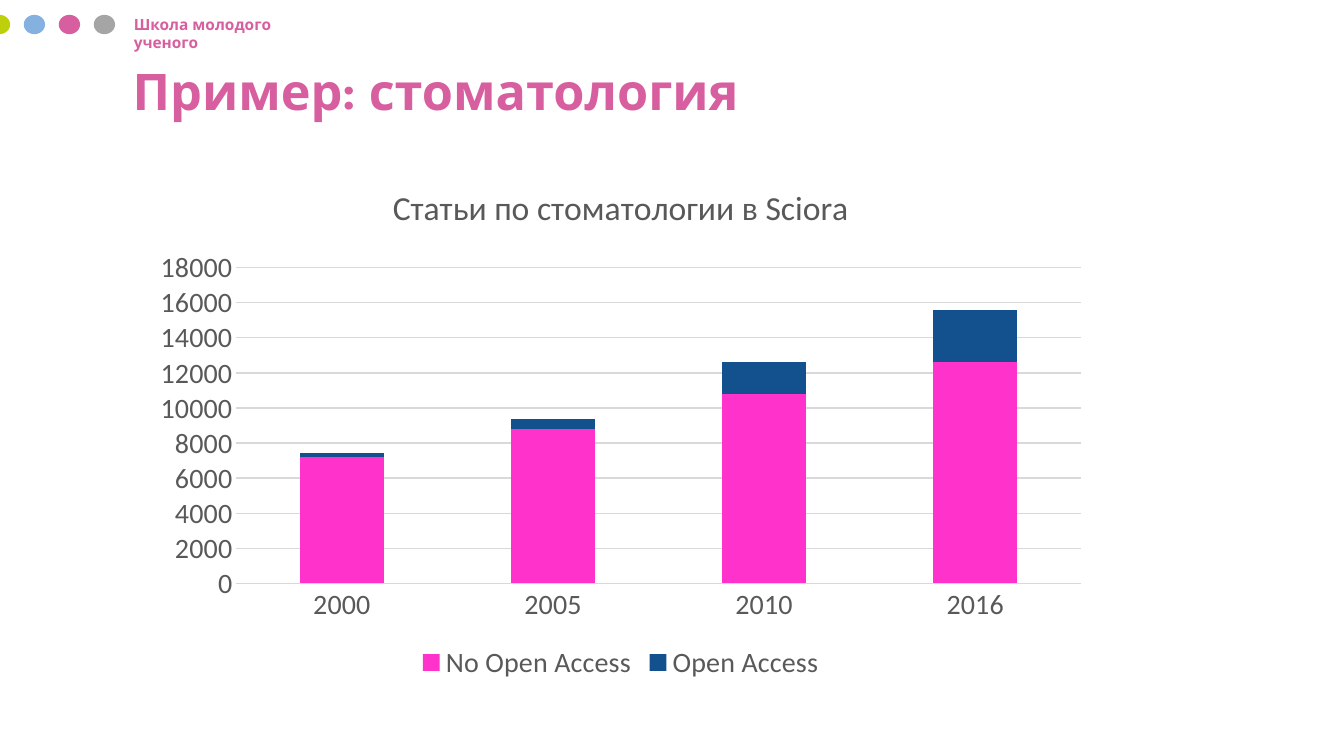
import pptx
import pptx.util
import pptx.dml.color
import pptx.chart.data
import pptx.enum.chart
import pptx.enum.shapes
import pptx.enum.text

Pt = pptx.util.Pt
HUES = {"lime": "BED00A", "sky": "85B1E0", "rose": "D75F9F", "gray": "A5A5A5",
        "text": "595959", "grid": "D9D9D9", "pink": "FF33CC", "navy": "13508E"}


def rgb(hue):
    return pptx.dml.color.RGBColor.from_string(HUES[hue])


def put(item, vals):
    for key, val in vals.items():
        setattr(item, key, val)


class Page:
    head = {"name": "Karla", "bold": True}

    def __init__(self, deck):
        self.slide = deck.slides.add_slide(deck.slide_layouts[5])
        self.shapes = self.slide.shapes

    def font(self, font, size, hue, **vals):
        put(font, {"size": Pt(size), **vals})
        font.color.rgb = rgb(hue)

    def fill(self, fmt, hue):
        fmt.fill.solid()
        fmt.fill.fore_color.rgb = rgb(hue)

    def words(self, frame, text, size, anchor):
        put(frame, {"text": text, "word_wrap": True, "vertical_anchor": anchor,
                    "auto_size": pptx.enum.text.MSO_AUTO_SIZE.NONE})
        para = frame.paragraphs[0]
        para.alignment = pptx.enum.text.PP_ALIGN.LEFT
        self.font(para.font, size, "rose", **self.head)
        return para

    def dot(self, left, top, wide, high, hue):
        oval = self.shapes.add_shape(pptx.enum.shapes.MSO_SHAPE.OVAL,
                                     Pt(left), Pt(top), Pt(wide), Pt(high))
        oval.shadow.inherit = False
        self.fill(oval, hue)
        oval.line.fill.background()

    def label(self, left, top, wide, high, text, size):
        box = self.shapes.add_textbox(Pt(left), Pt(top), Pt(wide), Pt(high))
        self.words(box.text_frame, text, size, pptx.enum.text.MSO_ANCHOR.TOP)

    def title(self, left, top, wide, high, text, size):
        box = self.shapes.title
        put(box, {"left": Pt(left), "top": Pt(top),
                  "width": Pt(wide), "height": Pt(high)})
        para = self.words(box.text_frame, text, size, pptx.enum.text.MSO_ANCHOR.MIDDLE)
        para.line_spacing = 0.9

    def stack(self, left, top, wide, high, name, cats, rows):
        data = pptx.chart.data.CategoryChartData()
        data.categories = cats
        for key, (hue, vals) in rows.items():
            data.add_series(key, vals)
        chart = self.shapes.add_chart(
            pptx.enum.chart.XL_CHART_TYPE.COLUMN_STACKED,
            Pt(left), Pt(top), Pt(wide), Pt(high), data).chart
        self.font(chart.font, 20, "text", name="Calibri")

        # Chart title and legend
        chart.has_title = True
        frame = chart.chart_title.text_frame
        frame.text = name
        self.font(frame.paragraphs[0].font, 24, "text", name="Calibri", bold=False)
        chart.has_legend = True
        put(chart.legend, {"include_in_layout": False,
                           "position": pptx.enum.chart.XL_LEGEND_POSITION.BOTTOM})
        self.font(chart.legend.font, 20, "text", name="Calibri")

        # Axes
        none = pptx.enum.chart.XL_TICK_MARK.NONE
        for axis in (chart.category_axis, chart.value_axis):
            put(axis, {"major_tick_mark": none, "minor_tick_mark": none})
            self.font(axis.tick_labels.font, 20, "text", name="Calibri")
        put(chart.value_axis, {"minimum_scale": 0, "maximum_scale": 18000,
                               "major_unit": 2000, "has_major_gridlines": True})
        chart.value_axis.format.line.fill.background()
        for part in (chart.category_axis, chart.value_axis.major_gridlines):
            part.format.line.width = Pt(0.75)
            part.format.line.color.rgb = rgb("grid")

        # Columns
        plot = chart.plots[0]
        put(plot, {"gap_width": 150, "overlap": 100, "vary_by_categories": False})
        for row, (hue, vals) in zip(plot.series, rows.values()):
            self.fill(row.format, hue)


def main():
    deck = pptx.Presentation()
    put(deck, {"slide_width": Pt(960), "slide_height": Pt(540)})
    page = Page(deck)

    # Header strip
    page.label(88.5, 7.2, 119.5, 21, "Школа молодого ученого", 11)
    for num, hue in enumerate(("lime", "sky", "rose", "gray")):
        page.dot(-8 + 25 * num, 10.6, 15.2, 13.8, hue)

    # Title
    page.title(87.5, 26, 803.5, 82, "Пример: стоматология", 36)

    # Articles by year
    page.stack(101, 116.6, 684.7, 373, "Статьи по стоматологии в Sciora",
               ("2000", "2005", "2010", "2016"),
               {"No Open Access": ("pink", (7200, 8800, 10800, 12600)),
                "Open Access": ("navy", (200, 600, 1800, 3000))})
    deck.save("out.pptx")


if __name__ == "__main__":
    main()
